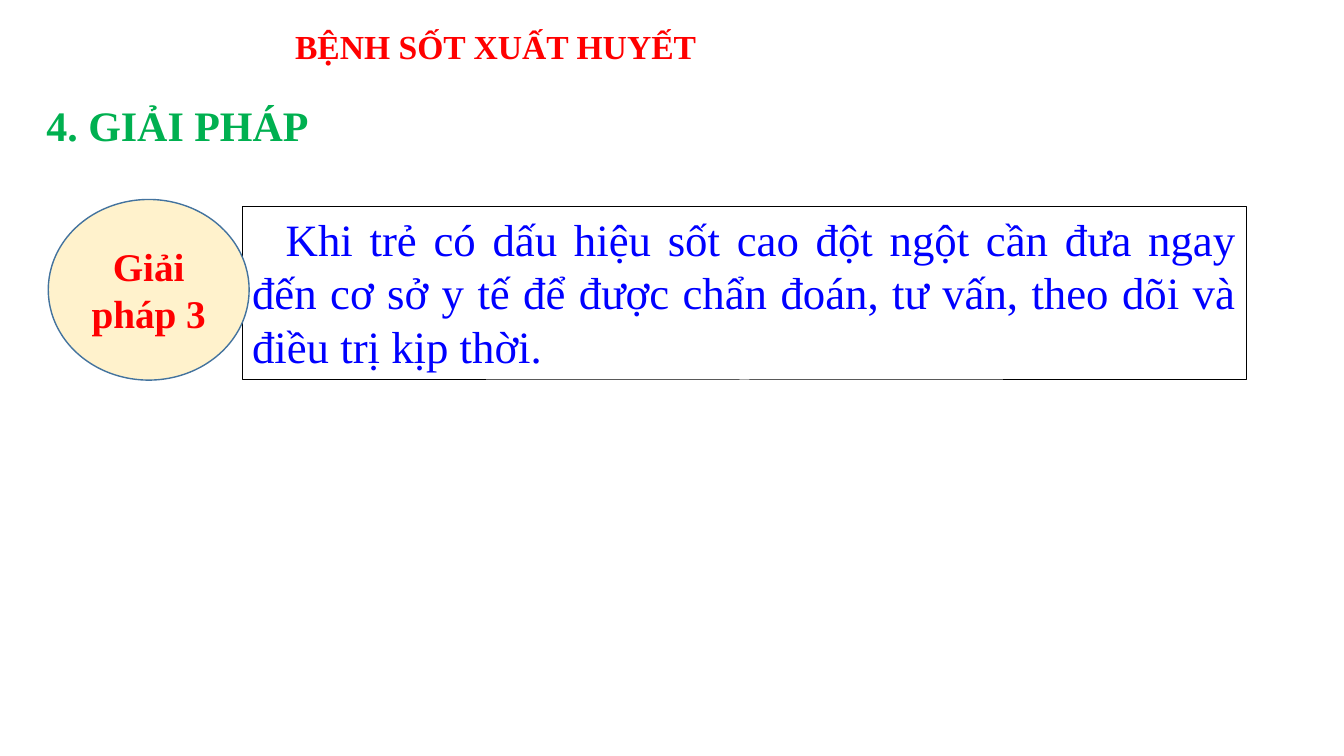
import pptx
import pptx.dml.color
import pptx.enum.shapes
import pptx.enum.text
import pptx.util
from dataclasses import dataclass
from lxml import etree

Pt = pptx.util.Pt
Align = pptx.enum.text.PP_ALIGN
Anchor = pptx.enum.text.MSO_ANCHOR
Shape = pptx.enum.shapes.MSO_SHAPE
A = "{http://schemas.openxmlformats.org/drawingml/2006/main}"


@dataclass(frozen=True)
class Theme:
    font: str = "Times New Roman"
    red: str = "FF0000"
    green: str = "00B050"
    blue: str = "0000FF"
    cream: str = "FFF2CC"
    steel: str = "43739E"
    black: str = "000000"
    title: int = 24
    heading: int = 30
    badge: int = 28
    body: int = 32


THEME = Theme()


def rgb(value):
    return pptx.dml.color.RGBColor.from_string(value)


def write(shape, text, size, color, align, bold=True, anchor=Anchor.TOP):
    """Fill a shape with one styled paragraph and return the paragraph."""
    tf = shape.text_frame
    tf.text = text
    tf.word_wrap = True
    tf.auto_size = pptx.enum.text.MSO_AUTO_SIZE.NONE
    tf.vertical_anchor = anchor
    p = tf.paragraphs[0]
    p.alignment = align
    font = p.runs[0].font
    font.name, font.size, font.bold = THEME.font, Pt(size), bold
    font.color.rgb = rgb(color)
    return p


def add_outlined(s, kind, box, line, width, fill=None):
    sp = s.shapes.add_shape(kind, *map(Pt, box))
    sp.shadow.inherit = False
    if fill:
        sp.fill.solid()
        sp.fill.fore_color.rgb = rgb(fill)
    else:
        sp.fill.background()
    sp.line.color.rgb = rgb(line)
    sp.line.width = Pt(width)
    return sp


def add_title(s, box, text):
    sp = s.shapes.title
    sp.left, sp.top, sp.width, sp.height = map(Pt, box)
    p = write(sp, text, THEME.title, THEME.red, Align.CENTER)
    ln = etree.Element(A + "ln", w=str(int(Pt(0.75))))
    fill = etree.SubElement(ln, A + "solidFill")
    etree.SubElement(fill, A + "srgbClr", val=THEME.red)
    p.runs[0].font._element.insert(0, ln)


def add_heading(s, box, text):
    sp = s.shapes.add_textbox(*map(Pt, box))
    p = write(sp, text, THEME.heading, THEME.green, Align.JUSTIFY)
    p.line_spacing = 1.07
    p.space_after = Pt(8)


def add_solution(s, box, label, text):
    """Place a framed text with a round label overlapping its left edge."""
    x, y, w, h = box
    badge_w, overlap, rise = 143.5, 5, 5
    frame_x = x + badge_w - overlap
    frame = add_outlined(s, Shape.RECTANGLE, (frame_x, y + rise, x + w - frame_x, h - rise),
                         THEME.black, 0.75)
    p = write(frame, text, THEME.body, THEME.blue, Align.JUSTIFY, bold=False)
    pPr = p._p.get_or_add_pPr()
    pPr.set("marL", "0")
    pPr.set("indent", str(int(Pt(24))))
    badge = add_outlined(s, Shape.OVAL, (x, y, badge_w, h), THEME.steel, 1, THEME.cream)
    write(badge, label, THEME.badge, THEME.red, Align.CENTER, anchor=Anchor.MIDDLE)


def main():
    prs = pptx.Presentation()
    prs.slide_width, prs.slide_height = Pt(960), Pt(540)
    s = prs.slides.add_slide(prs.slide_layouts[5])
    add_title(s, (14.5, 15, 679, 42), "BỆNH SỐT XUẤT HUYẾT")
    add_heading(s, (26, 65, 294.5, 43), "4. GIẢI PHÁP")
    add_solution(s, (34.5, 142.5, 856, 129), "Giải pháp 3",
                 "Khi trẻ có dấu hiệu sốt cao đột ngột cần đưa ngay đến cơ sở y tế "
                 "để được chẩn đoán, tư vấn, theo dõi và điều trị kịp thời.")
    prs.save("out.pptx")


if __name__ == "__main__":
    main()
